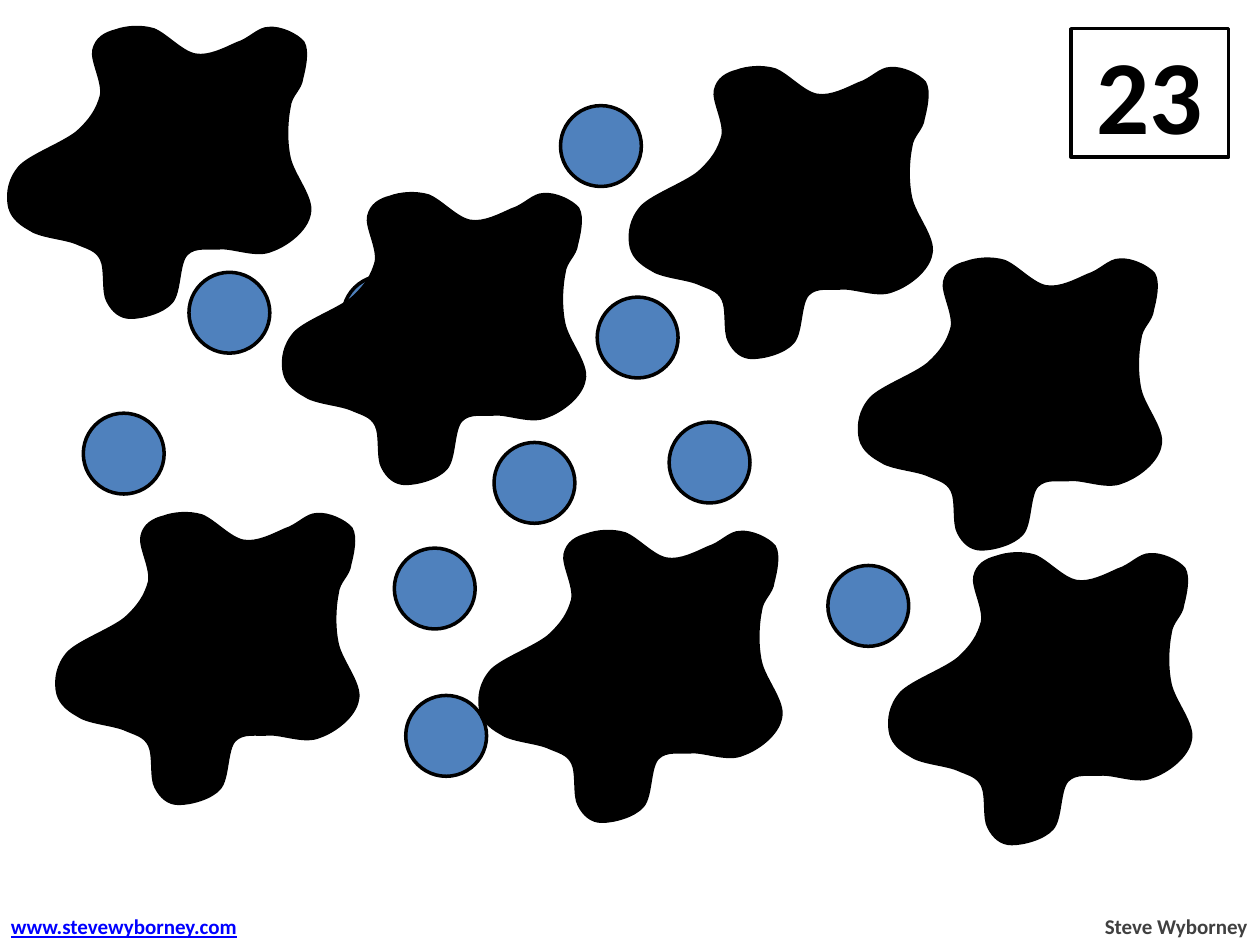
from lxml.etree import Element, SubElement
from pptx import Presentation
from pptx.dml.color import RGBColor
from pptx.enum.shapes import MSO_SHAPE
from pptx.enum.text import MSO_ANCHOR, MSO_AUTO_SIZE, PP_ALIGN
from pptx.oxml.ns import qn
from pptx.util import Cm, Pt

COLORS = {"ink": "000000", "paper": "FFFFFF", "dot": "4F81BD",
          "author": "404040", "site": "0000FF"}

DOT_SIZE = 1.63
DOTS = [
    (3.66, 1.37), (3.81, 5.49), (4.78, 11.4), (12.04, 5.99), (9.19, 6.2),
    (1.68, 8.33), (8.18, 14.02), (6.91, 5.56), (11.79, 13.77), (0.81, 2.97),
    (9.96, 8.92), (11.3, 2.13), (18.31, 13.64), (1.63, 12.7), (16.69, 11.4),
    (14.5, 4.57), (19.2, 5.38), (7.95, 11.05), (13.49, 8.51), (20.78, 7.87),
    (21.64, 13.82), (16.31, 2.59), (13.34, 11.4),
]

SPLAT_SIZE = (5.82, 6.05)
SPLATS = [(12.83, 1.27), (9.8, 10.62), (1.27, 10.26), (18.06, 11.07),
          (5.84, 3.81), (17.45, 5.13), (0.3, 0.46)]
# Upright outline: a start point, then two control points and an end per curve.
SPLAT_RIGHT, SPLAT_BOTTOM, SPLAT_LEFT = 238, 229, 1
SPLAT_START = (17, 159)
SPLAT_CURVES = [
    ((8, 154), (2, 148), (1, 139)),
    ((0, 131), (1, 120), (10, 110)),
    ((19, 101), (44, 92), (55, 83)),
    ((66, 73), (71, 65), (74, 54)),
    ((76, 43), (66, 26), (68, 18)),
    ((70, 9), (77, 5), (85, 3)),
    ((93, 0), (105, -1), (115, 2)),
    ((125, 6), (137, 20), (148, 22)),
    ((159, 24), (172, 17), (181, 13)),
    ((191, 10), (198, 1), (206, 1)),
    ((215, 0), (228, 6), (233, 12)),
    ((237, 19), (234, 32), (232, 40)),
    ((231, 49), (223, 53), (222, 63)),
    ((220, 73), (219, 89), (222, 103)),
    ((225, 117), (241, 135), (238, 147)),
    ((236, 160), (220, 172), (208, 176)),
    ((197, 181), (180, 174), (169, 174)),
    ((158, 175), (148, 172), (141, 179)),
    ((134, 186), (136, 209), (129, 217)),
    ((122, 225), (106, 229), (97, 229)),
    ((89, 229), (83, 224), (79, 216)),
    ((75, 209), (78, 191), (74, 183)),
    ((70, 175), (63, 174), (54, 170)),
    ((44, 166), (25, 165), (17, 159)),
]


def color(name):
    return RGBColor.from_string(COLORS[name])


def paint(shape, fill):
    shape.shadow.inherit = False
    shape.fill.solid()
    shape.fill.fore_color.rgb = color(fill)
    shape.line.color.rgb = color("ink")
    shape.line.width = Pt(2)


def write(frame, words, ink, align, **font_format):
    paragraph = frame.paragraphs[0]
    paragraph.alignment = align
    run = paragraph.add_run()
    run.text = words
    for attribute, value in {"name": "Calibri", "bold": True, **font_format}.items():
        setattr(run.font, attribute, value)
    run.font.color.rgb = color(ink)


def add_total(slide, total):
    card = slide.shapes.add_shape(MSO_SHAPE.RECTANGLE, Cm(21.59), Cm(0.58),
                                  Cm(3.18), Cm(2.59))
    paint(card, "paper")
    card.text_frame.vertical_anchor = MSO_ANCHOR.MIDDLE
    write(card.text_frame, total, "ink", PP_ALIGN.CENTER, size=Pt(60))


def add_footer(slide, left, width, words, ink, align, **font_format):
    footer = slide.shapes.add_textbox(Cm(left), Cm(18.29), Cm(width), Cm(0.76))
    footer.text_frame.word_wrap = False
    footer.text_frame.auto_size = MSO_AUTO_SIZE.SHAPE_TO_FIT_TEXT
    write(footer.text_frame, words, ink, align, size=Pt(12), **font_format)


def add_dot(slide, left, top):
    dot = slide.shapes.add_shape(MSO_SHAPE.OVAL, Cm(left), Cm(top),
                                 Cm(DOT_SIZE), Cm(DOT_SIZE))
    paint(dot, "dot")


def lay_down(point):
    """Turn an upright point a quarter, to be undone by the shape's rotation."""
    x, y = point
    return SPLAT_BOTTOM - y, x - SPLAT_LEFT


def add_splat(slide, left, top):
    curves = [[lay_down(point) for point in curve] for curve in SPLAT_CURVES]
    scale = Cm(SPLAT_SIZE[1]) / (SPLAT_RIGHT - SPLAT_LEFT)
    builder = slide.shapes.build_freeform(*lay_down(SPLAT_START), scale=scale)
    builder.add_line_segments([curve[-1] for curve in curves], close=True)
    splat = builder.convert_to_shape()
    for segment, curve in zip(list(splat._element.iter(qn("a:lnTo"))), curves):
        bezier = Element(qn("a:cubicBezTo"))
        for x, y in curve:
            SubElement(bezier, qn("a:pt"), x=str(x), y=str(y))
        segment.getparent().replace(segment, bezier)
    splat.left, splat.top = Cm(left), Cm(top)
    splat.width, splat.height = map(Cm, SPLAT_SIZE)
    splat.rotation = 270
    paint(splat, "ink")


def main():
    deck = Presentation()
    deck.slide_width, deck.slide_height = Cm(25.4), Cm(19.05)
    slide = deck.slides.add_slide(deck.slide_layouts[6])
    add_total(slide, "23")
    add_footer(slide, 22, 3.4, "Steve Wyborney", "author", PP_ALIGN.RIGHT)
    add_footer(slide, -0.03, 5.12, "www.stevewyborney.com", "site",
               PP_ALIGN.LEFT, underline=True)
    for place in DOTS:
        add_dot(slide, *place)
    for place in SPLATS:
        add_splat(slide, *place)
    deck.save("out.pptx")


if __name__ == "__main__":
    main()
